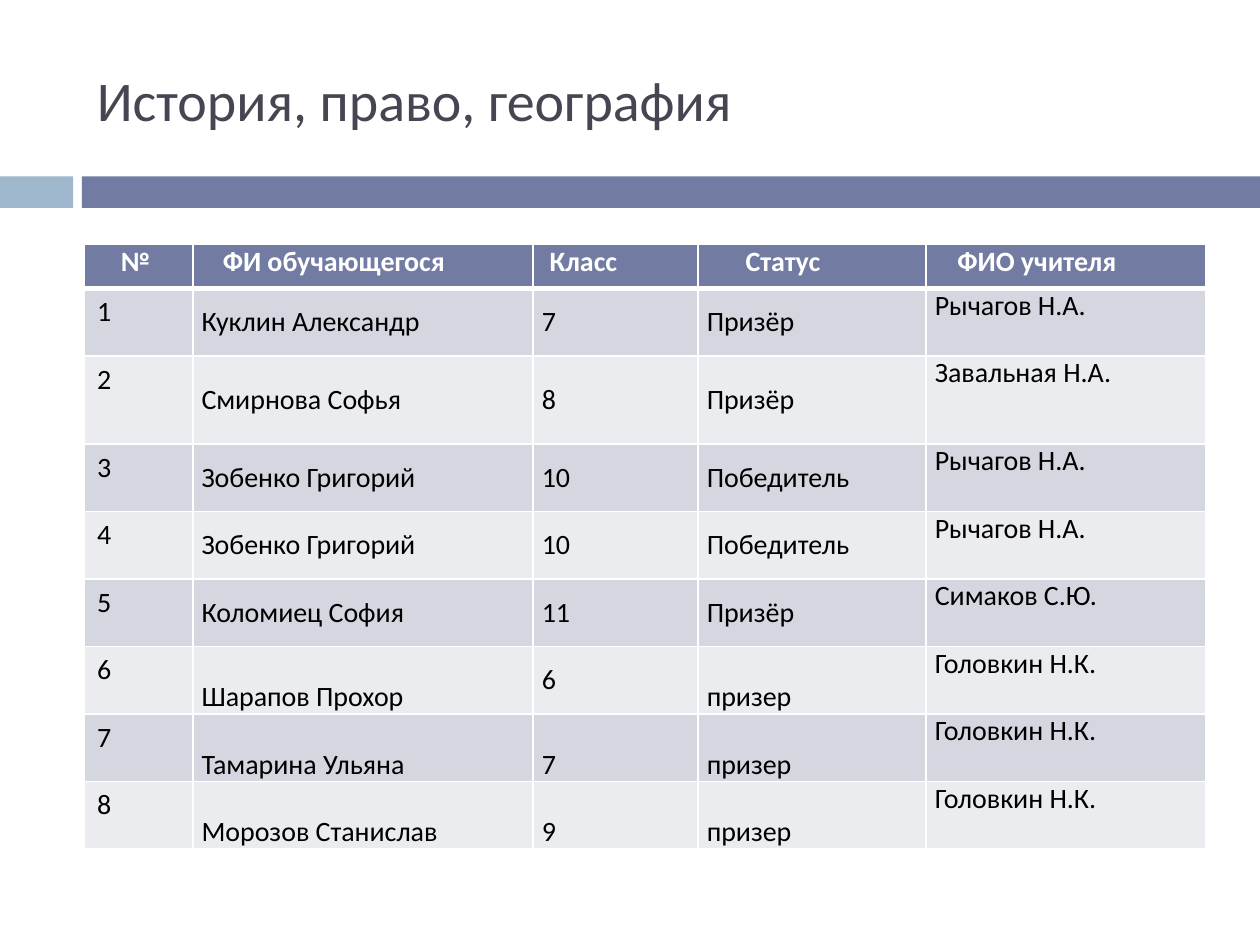
from dataclasses import dataclass

from lxml import etree
from pptx import Presentation
from pptx.dml.color import RGBColor
from pptx.enum.shapes import MSO_SHAPE
from pptx.enum.text import MSO_ANCHOR, PP_ALIGN
from pptx.oxml.ns import qn
from pptx.util import Inches, Pt

RECT = MSO_SHAPE.RECTANGLE
TOP, MID, LOW = MSO_ANCHOR.TOP, MSO_ANCHOR.MIDDLE, MSO_ANCHOR.BOTTOM
LEFT, MIDST, JUST = PP_ALIGN.LEFT, PP_ALIGN.CENTER, PP_ALIGN.JUSTIFY


@dataclass(frozen=True)
class Theme:
    font: str = "Calibri"
    title: str = "464653"
    main: str = "727CA3"
    light: str = "9FB8CD"
    odd: str = "D5D7E0"
    even: str = "EBECF0"
    white: str = "FFFFFF"
    black: str = "000000"
    big: int = 32
    small: int = 16


THEME = Theme()
HEADS = ["№", "ФИ обучающегося", "Класс ", "Статус", "ФИО учителя"]
SHIFTS = [0.05, 0.46, 0.46, 0.46, 0.46]
WIDTHS = [0.86, 2.7, 1.31, 1.81, 2.22]
PUPILS = [
    ("Куклин Александр", "7", "Призёр", "Рычагов Н.А.", MID, MID, JUST),
    ("Смирнова Софья", "8", "Призёр", "Завальная Н.А.", MID, MID, JUST),
    ("Зобенко Григорий", "10", "Победитель", "Рычагов Н.А.", MID, MID, LEFT),
    ("Зобенко Григорий", "10", "Победитель", "Рычагов Н.А.", MID, MID, LEFT),
    ("Коломиец София", "11", "Призёр", "Симаков С.Ю.", MID, MID, LEFT),
    ("Шарапов Прохор", "6", "призер", "Головкин Н.К.", LOW, MID, JUST),
    ("Тамарина Ульяна", "7", "призер", "Головкин Н.К.", LOW, LOW, JUST),
    ("Морозов Станислав", "9", "призер", "Головкин Н.К.", LOW, LOW, JUST),
]


def apply(item, form):
    for key, value in form.items():
        setattr(item, key, value)


def write(frame, text, size, color, bold=False, align=LEFT):
    para = frame.paragraphs[0]
    para.alignment = align
    run = para.add_run()
    run.text = text
    apply(run.font, {"name": THEME.font, "size": Pt(size), "bold": bold})
    run.font.color.rgb = RGBColor.from_string(color)


def add_title(slide, box, text):
    frame = slide.shapes.add_textbox(*box).text_frame
    apply(frame, {"word_wrap": True, "vertical_anchor": MID})
    write(frame, text, THEME.big, THEME.title)


def add_band(slide, box):
    left, top, width, height = box
    start = Inches(0.65)
    parts = [(0, Inches(0.58), THEME.light), (start, width - start, THEME.main)]
    for shift, span, color in parts:
        bar = slide.shapes.add_shape(RECT, left + shift, top, span, height)
        bar.shadow.inherit = False
        bar.fill.solid()
        bar.fill.fore_color.rgb = RGBColor.from_string(color)
        bar.line.fill.background()


def add_edges(cell, sizes):
    props = cell._tc.get_or_add_tcPr()
    for side, size in sizes.items():
        line = etree.SubElement(props, qn(f"a:ln{side}"), w=str(Pt(size)))
        fill = etree.SubElement(line, qn("a:solidFill"))
        etree.SubElement(fill, qn("a:srgbClr"), val=THEME.white)


def set_cell(cell, text, fill, edges, form, **style):
    apply(cell, form)
    add_edges(cell, edges)
    cell.fill.solid()
    cell.fill.fore_color.rgb = RGBColor.from_string(fill)
    write(cell.text_frame, text, THEME.small, **style)


def add_grid(slide, box):
    height = box[3]
    table = slide.shapes.add_table(len(PUPILS) + 1, len(HEADS), *box).table
    for col, width in zip(table.columns, WIDTHS):
        col.width = Inches(width)
    head, tall = Inches(0.35), Inches(0.7)
    each = (height - head - tall) // (len(PUPILS) - 1)
    for pos, row in enumerate(table.rows):
        row.height = {0: head, 2: tall}.get(pos, each)

    side = Inches(0.07)
    tight = {"margin_left": side, "margin_right": side,
             "margin_top": 0, "margin_bottom": 0}
    thin = {"L": 1, "R": 1, "T": 1, "B": 1}
    for col, (text, shift) in enumerate(zip(HEADS, SHIFTS)):
        form = {**tight, "margin_right": side + Inches(shift)}
        set_cell(table.cell(0, col), text, THEME.main, {**thin, "B": 3}, form,
                 color=THEME.white, bold=True, align=MIDST)

    for row, (name, grade, rank, coach, edge, mid, align) in enumerate(PUPILS, 1):
        fill = THEME.odd if row % 2 else THEME.even
        edges = {**thin, "T": 3} if row == 1 else thin
        texts = [str(row), name, grade, rank, coach]
        anchors = [TOP, edge, mid, edge, TOP]
        for col, (text, anchor) in enumerate(zip(texts, anchors)):
            form = {**(tight if col else {}), "vertical_anchor": anchor}
            set_cell(table.cell(row, col), text, fill, edges, form,
                     color=THEME.black, align=align if col == 4 else LEFT)


def main():
    deck = Presentation()
    apply(deck, {"slide_width": Inches(10), "slide_height": Inches(7.5)})
    slide = deck.slides.add_slide(deck.slide_layouts[6])
    left, width = Inches(0.67), Inches(8.92)
    add_band(slide, (0, Inches(1.4), deck.slide_width, Inches(0.25)))
    add_title(slide, (left, Inches(0.25), width, Inches(1.08)),
              "История, право, география")
    add_grid(slide, (left, Inches(1.94), width, Inches(4.8)))
    deck.save("out.pptx")


if __name__ == "__main__":
    main()
